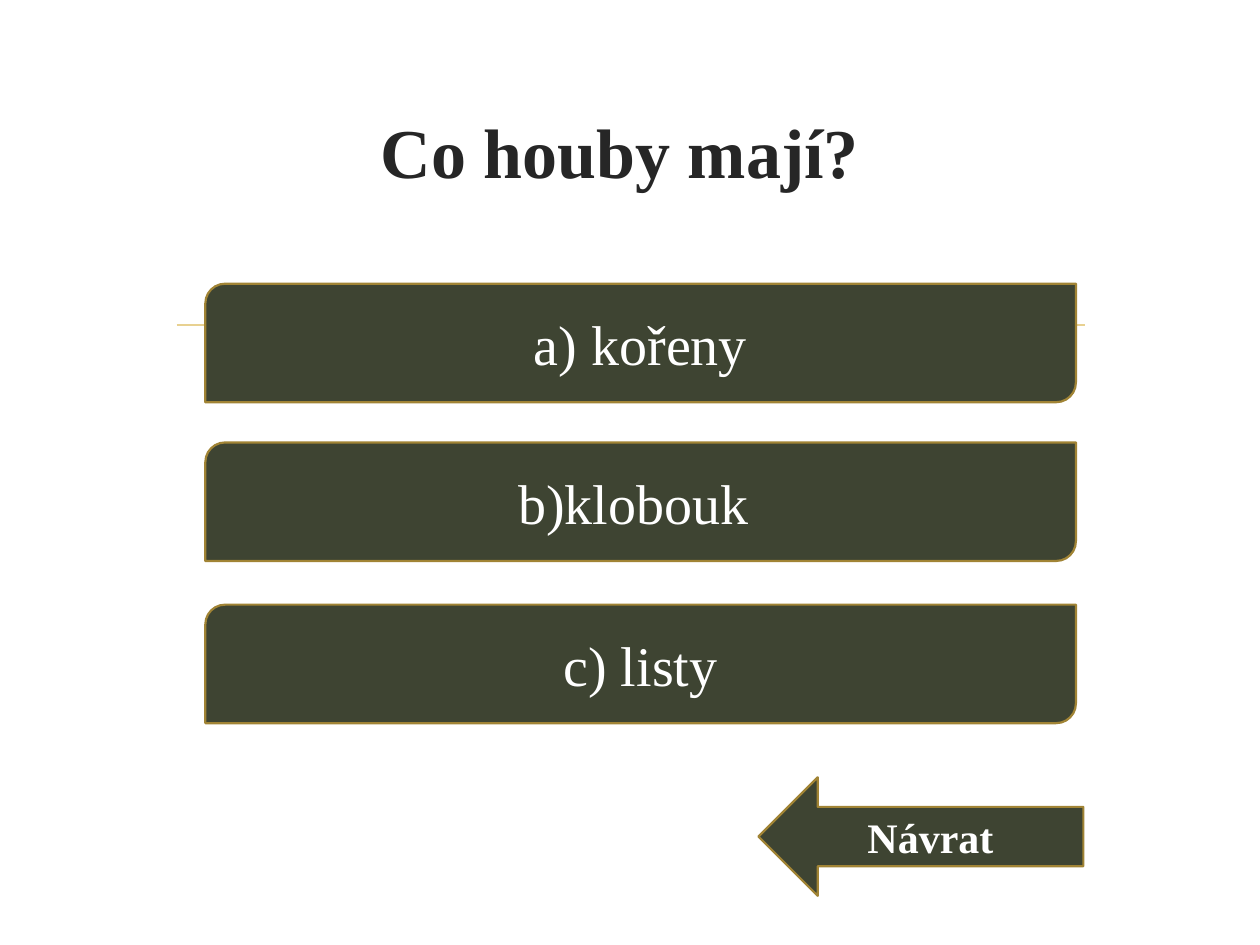
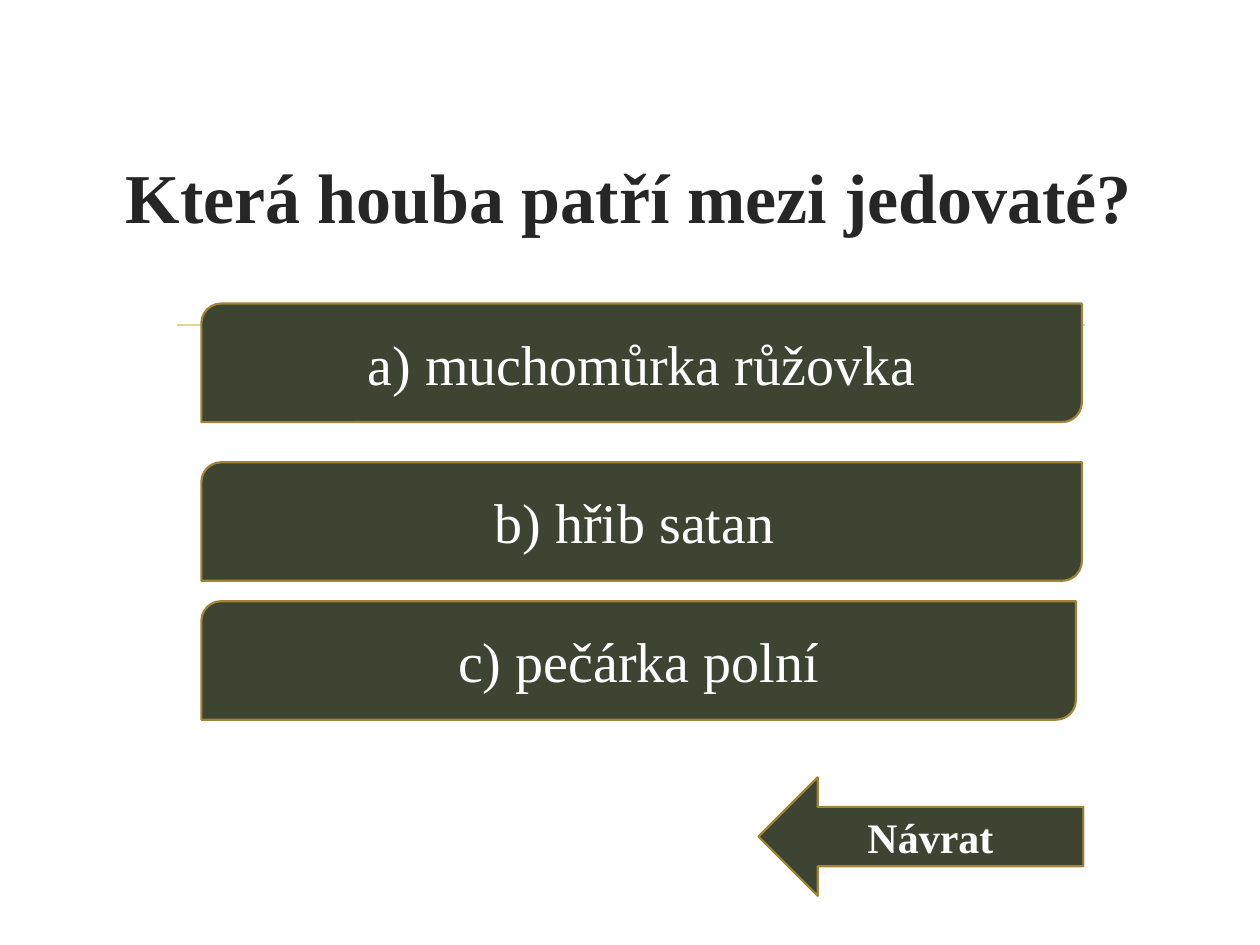
from dataclasses import dataclass

from lxml.etree import SubElement
from pptx import Presentation
from pptx.dml.color import RGBColor as Rgb
from pptx.enum.shapes import MSO_CONNECTOR as Connector, MSO_SHAPE as Shape
from pptx.enum.text import MSO_ANCHOR as Anchor, PP_ALIGN as Align
from pptx.oxml.ns import qn
from pptx.util import Cm, Pt


@dataclass(frozen=True)
class Theme:
    """Colours, type sizes and shared measures of the quiz."""
    font: str = "Times New Roman"
    ink: Rgb = Rgb(0x26, 0x26, 0x26)
    paper: Rgb = Rgb(0xFF, 0xFF, 0xFF)
    moss: Rgb = Rgb(0x3E, 0x44, 0x32)
    gold: Rgb = Rgb(0xA1, 0x84, 0x35)
    pale_gold: Rgb = Rgb(0xE8, 0xD1, 0x91)
    title_size: Pt = Pt(40)
    answer_size: Pt = Pt(32)
    return_size: Pt = Pt(24)
    line_width: Pt = Pt(1.25)
    button_height: float = 2.39
    title_height: float = 3.18


THEME = Theme()

QUESTIONS = [
    {
        "title": "Co houby mají?",
        "title_place": (1.09, 1.45, 22.81),
        "answers": [
            ("a) kořeny", 4.14, 5.72, 17.55),
            ("b)klobouk ", 4.14, 8.92, 17.55),
            ("c) listy", 4.14, 12.19, 17.55),
        ],
    },
    {
        "title": "Která houba patří mezi jedovaté?",
        "title_place": (2.26, 2.36, 20.83),
        "answers": [
            ("a) muchomůrka růžovka", 4.06, 6.12, 17.75),
            ("b) hřib satan ", 4.06, 9.32, 17.75),
            ("c) pečárka polní", 4.06, 12.12, 17.63),
        ],
    },
]


def write_centred(shape, text, size, colour, bold=False):
    """Write one centred line of text in the middle of a shape."""
    frame = shape.text_frame
    frame.text = text
    frame.word_wrap = True
    frame.vertical_anchor = Anchor.MIDDLE
    para = frame.paragraphs[0]
    para.alignment = Align.CENTER
    for span in para.runs:
        span.font.name = THEME.font
        span.font.size = size
        span.font.bold = bold
        span.font.color.rgb = colour


def set_title(page, text, left, top, width):
    """Place and format the title placeholder."""
    title = page.shapes.title
    title.left, title.top = Cm(left), Cm(top)
    title.width, title.height = Cm(width), Cm(THEME.title_height)
    write_centred(title, text, THEME.title_size, THEME.ink, bold=True)


def add_rule(page):
    """Draw the thin gold rule below the title."""
    rule = page.shapes.add_connector(
        Connector.STRAIGHT, Cm(3.56), Cm(6.55), Cm(21.87), Cm(6.55))
    rule.line.color.rgb = THEME.pale_gold
    rule.line.width = THEME.line_width
    SubElement(rule.line._get_or_add_ln().getparent(), qn("a:effectLst"))


def add_button(page, kind, text, left, top, width, size, bold=False):
    """Draw a moss button with a gold outline and a label."""
    button = page.shapes.add_shape(
        kind, Cm(left), Cm(top), Cm(width), Cm(THEME.button_height))
    button.shadow.inherit = False
    button.fill.solid()
    button.fill.fore_color.rgb = THEME.moss
    button.line.color.rgb = THEME.gold
    button.line.width = THEME.line_width
    write_centred(button, text, size, THEME.paper, bold)


def add_question(deck, question):
    """Add a page with a question, its answers and the return arrow."""
    page = deck.slides.add_slide(deck.slide_layouts[5])
    set_title(page, question["title"], *question["title_place"])
    add_rule(page)
    for text, left, top, width in question["answers"]:
        add_button(page, Shape.ROUND_2_DIAG_RECTANGLE, text,
                   left, top, width, THEME.answer_size)
    add_button(page, Shape.LEFT_ARROW, "Návrat ", 15.29, 15.67, 6.55,
               THEME.return_size, bold=True)


def main():
    """Build and save the quiz."""
    deck = Presentation()
    deck.slide_width, deck.slide_height = Cm(25.4), Cm(19.05)
    for question in QUESTIONS:
        add_question(deck, question)
    deck.save("out.pptx")


if __name__ == "__main__":
    main()
